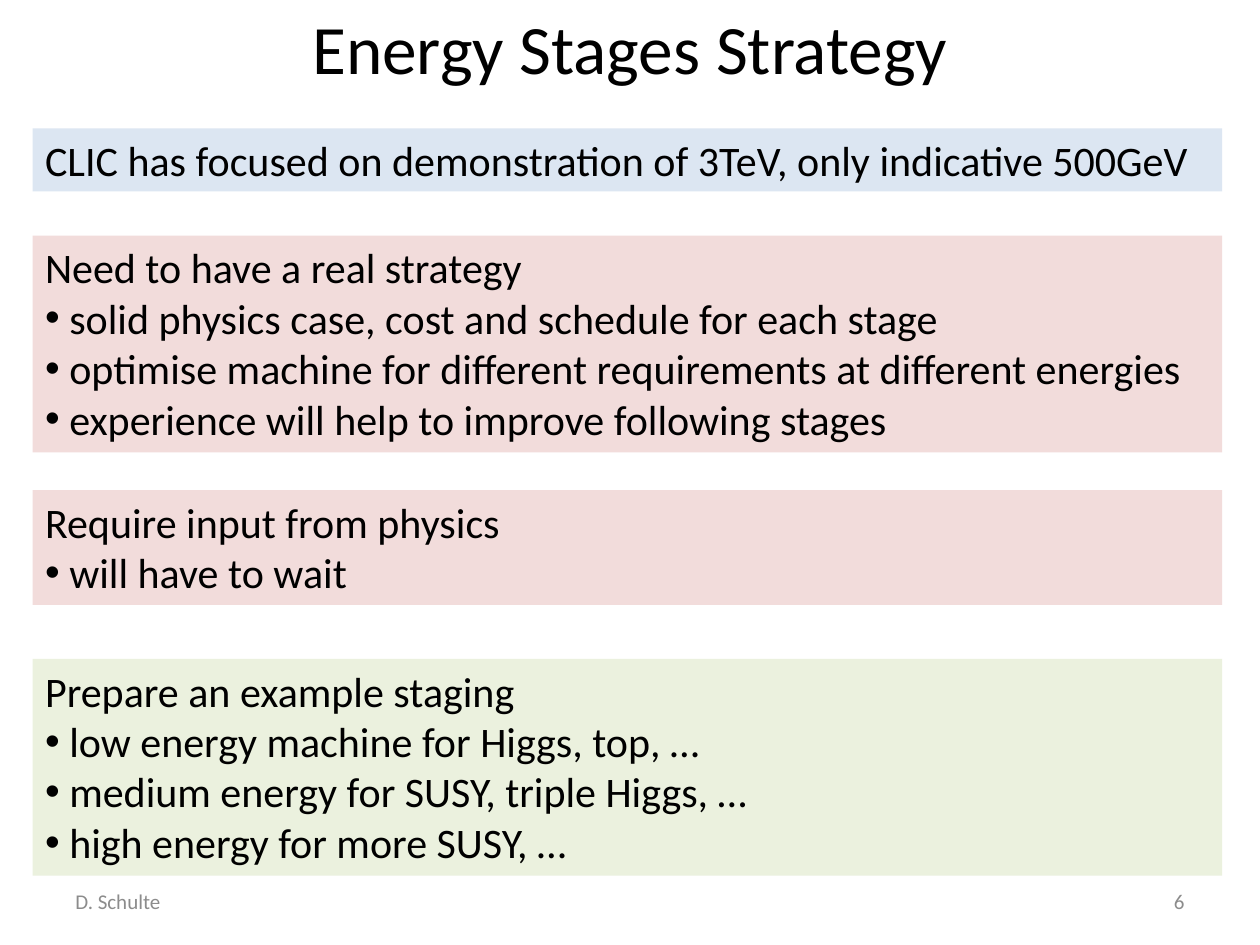
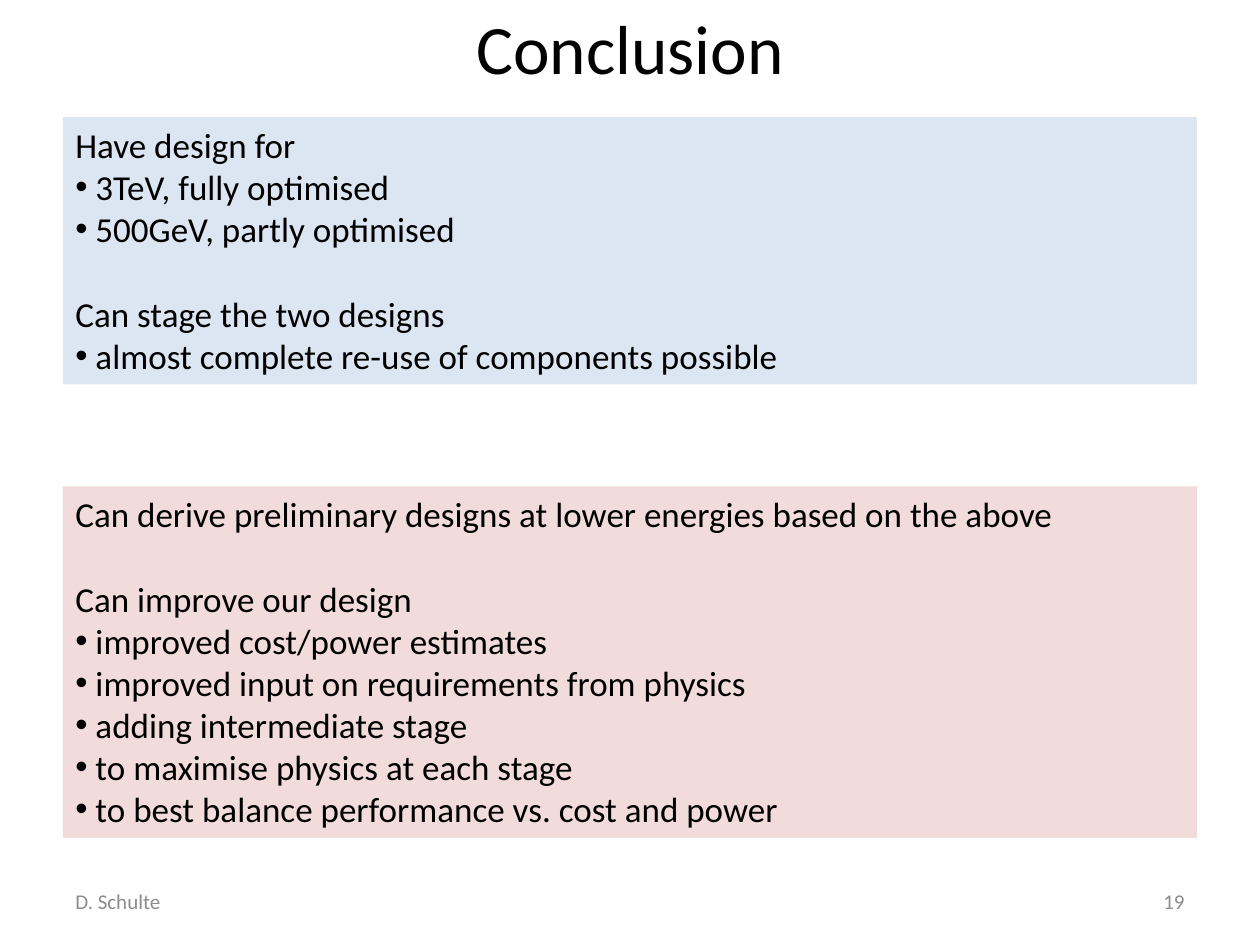
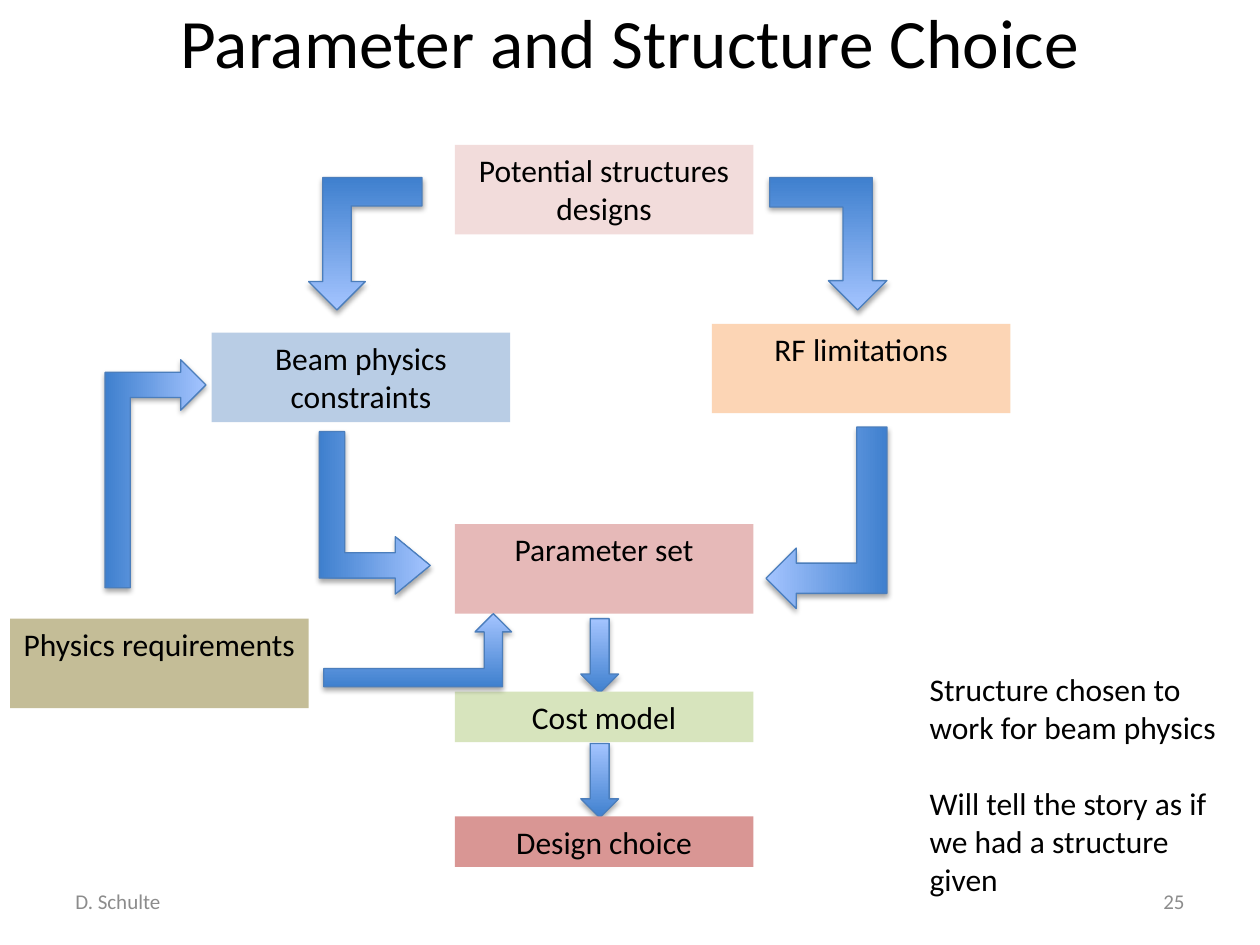
from typing import NamedTuple

from lxml.etree import SubElement
from pptx import Presentation
from pptx.dml.color import RGBColor
from pptx.enum.shapes import MSO_SHAPE
from pptx.enum.text import MSO_ANCHOR, MSO_AUTO_SIZE, PP_ALIGN
from pptx.oxml.ns import qn
from pptx.slide import Slide
from pptx.text.text import TextFrame, _Paragraph
from pptx.util import Emu, Inches, Pt

FONT = "Calibri"
LINE_HEIGHT = 1.22
BULLET_INDENT_PER_POINT = 0.008
COLORS = {
    "text": "000000",
    "footer": "8C8C8C",
    "pale_blue": "DCE6F2",
    "pale_red": "F2DCDB",
    "pale_green": "EBF1DE",
    "blue": "B9CDE5",
    "orange": "FCD5B5",
    "rose": "E6B9B8",
    "green": "D7E4BD",
    "red": "D99694",
    "tan": "C4BD97",
    "arrow_dark": "3F80CE",
    "arrow_light": "A4C4FF",
    "arrow_line": "4B7EBC",
}


class Block(NamedTuple):
    heading: str
    bullets: tuple[str, ...] = ()


class Panel(NamedTuple):
    top: float
    height: float
    fill: str
    blocks: tuple[Block, ...]


class FlowBox(NamedTuple):
    text: str
    left: float
    top: float
    fill: str
    height: float = 0.71


class BentArrow(NamedTuple):
    left: float
    top: float
    width: float
    height: float
    flip: str = ""
    rotation: int = 0
    adjustments: tuple[float, ...] = ()


STRATEGY_PANELS = (
    Panel(1.02, 0.5, "pale_blue", (
        Block("CLIC has focused on demonstration of 3TeV, only indicative 500GeV"),
    )),
    Panel(1.87, 1.72, "pale_red", (
        Block("Need to have a real strategy", (
            "solid physics case, cost and schedule for each stage",
            "optimise machine for different requirements at different energies",
            "experience will help to improve following stages",
        )),
    )),
    Panel(3.89, 0.91, "pale_red", (
        Block("Require input from physics", ("will have to wait",)),
    )),
    Panel(5.23, 1.72, "pale_green", (
        Block("Prepare an example staging", (
            "low energy machine for Higgs, top, …",
            "medium energy for SUSY, triple Higgs, …",
            "high energy for more SUSY, …",
        )),
    )),
)

CONCLUSION_PANELS = (
    Panel(0.93, 2.12, "pale_blue", (
        Block("Have design for", ("3TeV, fully optimised", "500GeV, partly optimised")),
        Block("Can stage the two designs", ("almost complete re-use of components possible",)),
    )),
    Panel(3.86, 2.79, "pale_red", (
        Block("Can derive preliminary designs at lower energies based on the above"),
        Block("Can improve our design", (
            "improved cost/power estimates",
            "improved input on requirements from physics",
            "adding intermediate stage",
            "to maximise physics at each stage",
            "to best balance performance vs. cost and power",
        )),
    )),
)

FLOW_WIDTH = 2.37
CENTER_LEFT = 3.61
FLOW_BOXES = (
    FlowBox("Potential structures designs", CENTER_LEFT, 1.15, "pale_red"),
    FlowBox("RF limitations", 5.65, 2.57, "orange"),
    FlowBox("Beam physics constraints", 1.68, 2.64, "blue"),
    FlowBox("Parameter set", CENTER_LEFT, 4.16, "rose"),
    FlowBox("Cost model", CENTER_LEFT, 5.49, "green", 0.4),
    FlowBox("Design choice", CENTER_LEFT, 6.48, "red", 0.4),
    FlowBox("Physics requirements", 0.08, 4.91, "tan"),
)
DOWN_ARROW_TOPS = (4.91, 5.9)
BENT_ARROWS = (
    BentArrow(6.11, 1.41, 0.93, 1.05, "V"),
    BentArrow(5.84, 3.63, 1.44, 0.96, "V", 90),
    BentArrow(2.45, 1.41, 0.9, 1.05, "HV"),
    BentArrow(2.33, 3.63, 1.29, 0.88, "HV", 270, (0.228, 0.259, 0.315)),
    BentArrow(0.33, 3.36, 1.81, 0.8, "H", 90),
    BentArrow(2.57, 4.87, 1.49, 0.58),
)
STRUCTURE_NOTE = (
    Block("Structure chosen to work for beam physics"),
    Block("Will tell the story as if we had a structure given"),
)


def rgb(name: str) -> RGBColor:
    return RGBColor.from_string(COLORS[name])


def format_paragraph(paragraph: _Paragraph, size: float, color: str = "text",
                     alignment: PP_ALIGN = PP_ALIGN.LEFT) -> None:
    paragraph.alignment = alignment
    for run in paragraph.runs:
        run.font.name = FONT
        run.font.size = Pt(size)
        run.font.color.rgb = rgb(color)


def add_bullet(paragraph: _Paragraph, size: float) -> None:
    indent = Inches(size * BULLET_INDENT_PER_POINT)
    properties = paragraph._p.get_or_add_pPr()
    properties.set("marL", str(indent))
    properties.set("indent", str(-indent))
    SubElement(properties, qn("a:buFont")).set("typeface", "Arial")
    SubElement(properties, qn("a:buChar")).set("char", "•")


def add_text_box(slide: Slide, left: float, top: float, width: float, height: float,
                 fill: str | None = None) -> TextFrame:
    shape = slide.shapes.add_textbox(Inches(left), Inches(top), Inches(width), Inches(height))
    if fill:
        shape.fill.solid()
        shape.fill.fore_color.rgb = rgb(fill)
    shape.text_frame.word_wrap = True
    shape.text_frame.auto_size = MSO_AUTO_SIZE.NONE
    return shape.text_frame


def write_blocks(text_frame: TextFrame, blocks: tuple[Block, ...], size: float) -> None:
    lines = [line for block in blocks for line in (block.heading, *block.bullets)]
    bullets = {line for block in blocks for line in block.bullets}
    text_frame.text = "\n".join(lines)
    for index, paragraph in enumerate(text_frame.paragraphs):
        if paragraph.text in bullets:
            add_bullet(paragraph, size)
        elif index:
            paragraph.space_before = Pt(size * LINE_HEIGHT)
        format_paragraph(paragraph, size)


def add_footer(slide: Slide, left: float, text: str, alignment: PP_ALIGN) -> None:
    text_frame = add_text_box(slide, left, 6.95, 2.33, 0.4)
    text_frame.vertical_anchor = MSO_ANCHOR.MIDDLE
    text_frame.text = text
    format_paragraph(text_frame.paragraphs[0], 12, "footer", alignment)


def add_titled_slide(presentation: Presentation, title: str, number: int,
                     title_height: float = 0.75) -> Slide:
    slide = presentation.slides.add_slide(presentation.slide_layouts.get_by_name("Title Only"))
    shape = slide.shapes.title
    shape.left, shape.top = Inches(0.5), Inches(0)
    shape.width, shape.height = Inches(9), Inches(title_height)
    text_frame = shape.text_frame
    text_frame.text = title
    text_frame.auto_size = MSO_AUTO_SIZE.NONE
    text_frame.vertical_anchor = MSO_ANCHOR.MIDDLE
    format_paragraph(text_frame.paragraphs[0], 39.6, alignment=PP_ALIGN.CENTER)
    add_footer(slide, 0.5, "D. Schulte", PP_ALIGN.LEFT)
    add_footer(slide, 7.17, str(number), PP_ALIGN.RIGHT)
    return slide


def add_panels(slide: Slide, panels: tuple[Panel, ...], left: float, width: float,
               size: float) -> None:
    for panel in panels:
        text_frame = add_text_box(slide, left, panel.top, width, panel.height, panel.fill)
        write_blocks(text_frame, panel.blocks, size)


def add_flow_box(slide: Slide, box: FlowBox) -> None:
    text_frame = add_text_box(slide, box.left, box.top, FLOW_WIDTH, box.height, box.fill)
    text_frame.text = box.text
    format_paragraph(text_frame.paragraphs[0], 18, alignment=PP_ALIGN.CENTER)


def add_arrow(slide: Slide, kind: MSO_SHAPE, arrow: BentArrow) -> None:
    shape = slide.shapes.add_shape(kind, Inches(arrow.left), Inches(arrow.top),
                                   Inches(arrow.width), Inches(arrow.height))
    shape.rotation = arrow.rotation
    for axis in arrow.flip:
        shape.element.spPr.xfrm.set(f"flip{axis}", "1")
    for index, value in enumerate(arrow.adjustments):
        shape.adjustments[index] = value
    shape.fill.gradient()
    shape.fill.gradient_angle = 90
    for stop, color in zip(shape.fill.gradient_stops, ("arrow_dark", "arrow_light")):
        stop.color.rgb = rgb(color)
    shape.line.color.rgb = rgb("arrow_line")
    shape.line.width = Pt(0.75)
    shape.shadow.inherit = False
    effects = shape.element.spPr.find(qn("a:effectLst"))
    shadow = SubElement(effects, qn("a:outerShdw"), blurRad=str(Emu(Pt(3.1))),
                        dist=str(Emu(Pt(1.8))), dir="5400000", rotWithShape="0")
    shadow_color = SubElement(shadow, qn("a:srgbClr"), val=COLORS["text"])
    SubElement(shadow_color, qn("a:alpha"), val="35000")


def build_strategy(presentation: Presentation) -> None:
    slide = add_titled_slide(presentation, "Energy Stages Strategy", 6)
    add_panels(slide, STRATEGY_PANELS, 0.26, 9.44, 24)


def build_conclusion(presentation: Presentation) -> None:
    slide = add_titled_slide(presentation, "Conclusion", 19)
    add_panels(slide, CONCLUSION_PANELS, 0.5, 9, 20)


def build_parameter_choice(presentation: Presentation) -> None:
    slide = add_titled_slide(presentation, "Parameter and Structure Choice", 25, 0.65)
    for top in DOWN_ARROW_TOPS:
        add_arrow(slide, MSO_SHAPE.DOWN_ARROW, BentArrow(4.61, top, 0.3, 0.59))
    for box in FLOW_BOXES:
        add_flow_box(slide, box)
    for arrow in BENT_ARROWS:
        add_arrow(slide, MSO_SHAPE.BENT_UP_ARROW, arrow)
    write_blocks(add_text_box(slide, 7.28, 5.27, 2.5, 1.92), STRUCTURE_NOTE, 18)


def main() -> None:
    presentation = Presentation()
    presentation.slide_width = Inches(10)
    presentation.slide_height = Inches(7.5)
    build_strategy(presentation)
    build_conclusion(presentation)
    build_parameter_choice(presentation)
    presentation.save("out.pptx")


if __name__ == "__main__":
    main()
